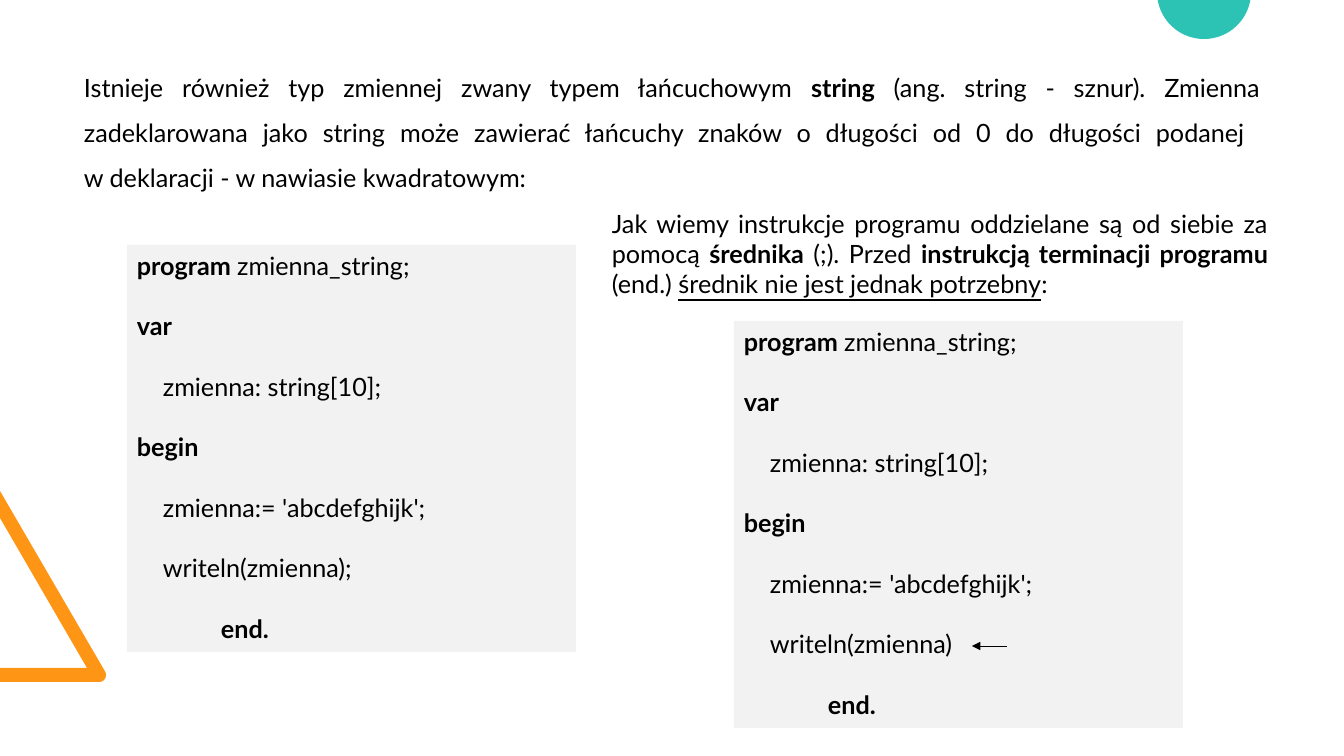
"""Builds a slide on Pascal string variables and the semicolon before end."""
import math
from dataclasses import dataclass

from lxml import etree
from pptx import Presentation
from pptx import util as u
from pptx.dml.color import RGBColor
from pptx.enum import shapes, text
from pptx.oxml.ns import qn

INTRO = [
    ("Istnieje również typ zmiennej zwany typem łańcuchowym ", ""),
    ("string", "b"),
    (" (ang. string - sznur). Zmienna zadeklarowana jako string może zawierać "
     "łańcuchy znaków o długości od 0 do długości podanej ", ""),
    ("\n", ""),
    ("w deklaracji - w nawiasie kwadratowym:", ""),
]
SEMICOLON_NOTE = [
    ("Jak wiemy instrukcje programu oddzielane są od siebie za pomocą ", ""),
    ("średnika", "b"),
    (" (;). Przed ", ""),
    ("instrukcją terminacji programu", "b"),
    (" (end.) ", ""),
    ("średnik nie jest jednak potrzebny", "u"),
    (":", ""),
]
STATEMENT_INDENT, END_INDENT = 26, 84


def program_lines(last_statement):
    """Returns the listing as (indent, runs) pairs."""
    return [
        (0, [("program ", "b"), ("zmienna_string;", "")]),
        (0, [("var", "b")]),
        (STATEMENT_INDENT, [("zmienna: string[10];", "")]),
        (0, [("begin", "b")]),
        (STATEMENT_INDENT, [("zmienna:= 'abcdefghijk';", "")]),
        (STATEMENT_INDENT, [(last_statement, "")]),
        (END_INDENT, [("end.", "b")]),
    ]


PROSE = [
    ((74, 52, 1196, 142), INTRO, 1.5),
    ((602, 203, 676, 102), SEMICOLON_NOTE, 1.0),
]
CODE_SIZE = (449, 407)
LISTINGS = [
    ((127, 245), program_lines("writeln(zmienna);")),
    ((734, 321), program_lines("writeln(zmienna)")),
]
ARROW = (1007, 646, 972, 646)


@dataclass(frozen=True)
class Theme:
    """Holds the colours and type sizes."""
    font: str = "Lato"
    size: u.Pt = u.Pt(18)
    line_gap: u.Pt = u.Pt(21.6)
    arrow_width: u.Pt = u.Pt(0.5)
    ink: RGBColor = RGBColor(0, 0, 0)
    panel: RGBColor = RGBColor(0xF2, 0xF2, 0xF2)
    orange: RGBColor = RGBColor(0xFF, 0x95, 0x14)
    teal: RGBColor = RGBColor(0x2C, 0xC3, 0xB4)


THEME = Theme()


def px(length):
    """Turns px into EMU."""
    return u.Emu(round(length * 914400 / 100.8))


def arc(center_x, center_y, radius, start, end, steps=40):
    """Lists points along an arc given in degrees."""
    angles = [math.radians(start + (end - start) * i / steps) for i in range(steps + 1)]
    return [(center_x + radius * math.cos(a), center_y + radius * math.sin(a)) for a in angles]


def paint(shape, color):
    """Gives a shape a flat fill without line or shadow."""
    shape.shadow.inherit = False
    shape.fill.solid()
    shape.fill.fore_color.rgb = color
    shape.line.fill.background()


def add_outline(slide, points, color):
    """Draws a closed filled outline."""
    first, *rest = [(px(x), px(y)) for x, y in points]
    builder = slide.shapes.build_freeform(*first, scale=1.0)
    builder.add_line_segments(rest, close=True)
    paint(builder.convert_to_shape(), color)


def add_runs(paragraph, runs):
    """Writes styled runs into a paragraph."""
    for words, style in runs:
        if words == "\n":
            paragraph.add_line_break()
            continue
        run = paragraph.add_run()
        run.text = words
        run.font.name = THEME.font
        run.font.size = THEME.size
        run.font.color.rgb = THEME.ink
        run.font.bold = style == "b"
        run.font.underline = style == "u"


def add_prose(slide, box, runs, spacing):
    """Adds one justified paragraph."""
    frame = slide.shapes.add_textbox(*map(px, box)).text_frame
    frame.word_wrap = True
    paragraph = frame.paragraphs[0]
    paragraph.alignment = text.PP_ALIGN.JUSTIFY
    paragraph.line_spacing = spacing
    add_runs(paragraph, runs)


def add_listing(slide, corner, lines):
    """Adds a grey panel of program code."""
    panel = slide.shapes.add_shape(
        shapes.MSO_SHAPE.RECTANGLE, *map(px, corner + CODE_SIZE))
    paint(panel, THEME.panel)
    frame = panel.text_frame
    frame.word_wrap = True
    frame.vertical_anchor = text.MSO_ANCHOR.TOP
    for index, (indent, runs) in enumerate(lines):
        paragraph = frame.add_paragraph() if index else frame.paragraphs[0]
        paragraph.alignment = text.PP_ALIGN.LEFT
        paragraph.space_before = THEME.line_gap if index else u.Pt(0)
        paragraph._p.get_or_add_pPr().set("marL", str(px(indent)))
        add_runs(paragraph, runs)


def add_arrow(slide, ends):
    """Adds a thin arrow pointing at its second end."""
    arrow = slide.shapes.add_connector(shapes.MSO_CONNECTOR.STRAIGHT, *map(px, ends))
    arrow.line.color.rgb = THEME.ink
    arrow.line.width = THEME.arrow_width
    etree.SubElement(arrow.line._get_or_add_ln(), qn("a:tailEnd"), type="triangle")
    etree.SubElement(arrow._element.spPr, qn("a:effectLst"))


def main():
    """Assembles and saves the slide."""
    presentation = Presentation()
    presentation.slide_width, presentation.slide_height = px(1344), px(756)
    slide = presentation.slides.add_slide(presentation.slide_layouts[6])
    triangle = [(0, 682), (0, 668), (87, 668), (0, 518), (0, 491)]
    add_outline(slide, triangle + arc(99, 675, 7, -30, 90), THEME.orange)
    add_outline(slide, arc(1204, -8, 47, 10, 170), THEME.teal)
    for box, runs, spacing in PROSE:
        add_prose(slide, box, runs, spacing)
    for corner, lines in LISTINGS:
        add_listing(slide, corner, lines)
    add_arrow(slide, ARROW)
    presentation.save("out.pptx")


if __name__ == "__main__":
    main()
